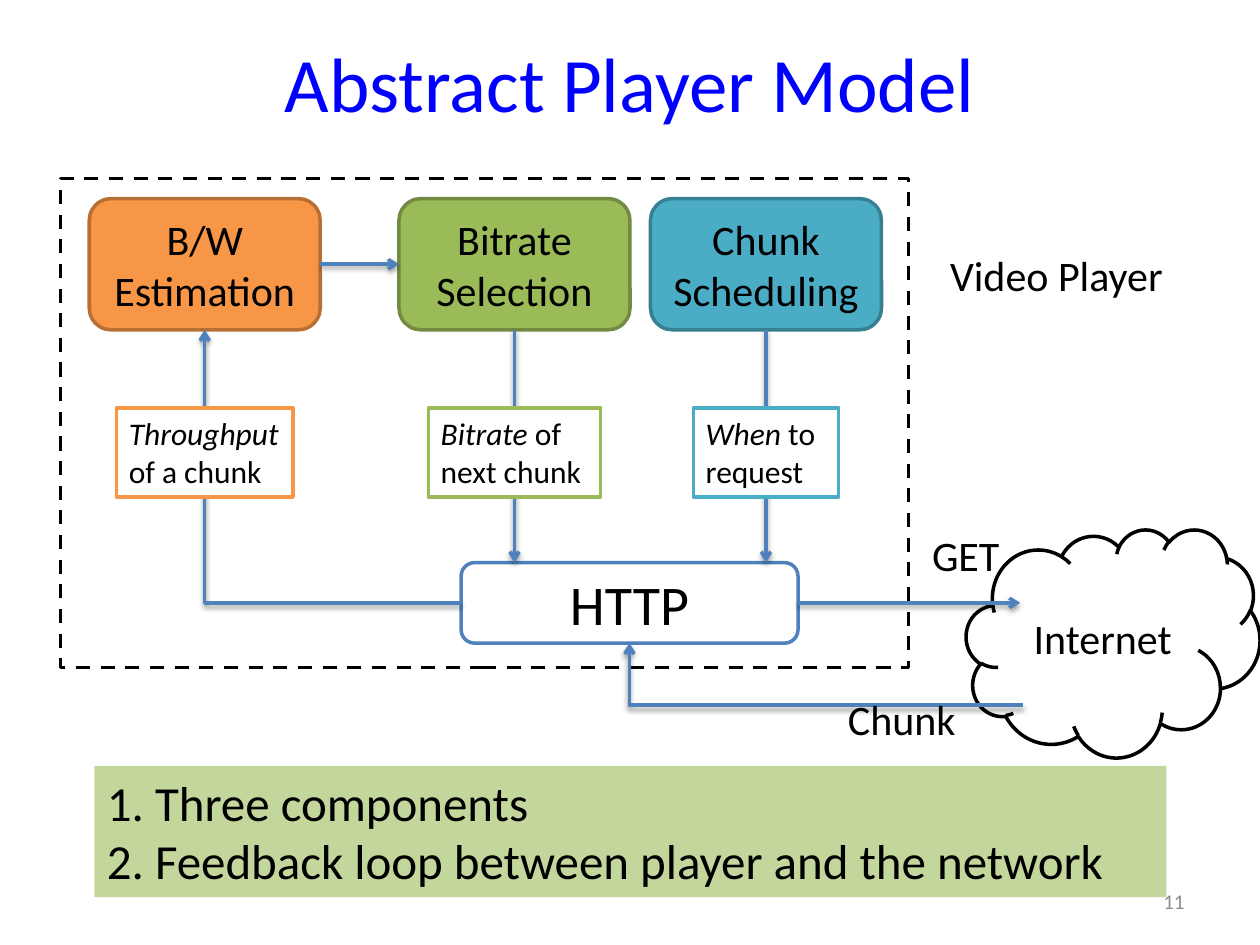
from lxml.etree import SubElement
from pptx import Presentation
from pptx.dml.color import RGBColor
from pptx.enum.dml import MSO_LINE
from pptx.enum.shapes import MSO_CONNECTOR, MSO_SHAPE
from pptx.enum.text import MSO_ANCHOR, PP_ALIGN
from pptx.oxml.ns import qn
from pptx.util import Pt

BLACK, WHITE, BLUE = "000000", "FFFFFF", "4F81BD"
ORANGE, GREEN, TEAL = "F79646", "9BBB59", "4BACC6"


def rgb(value):
    return RGBColor.from_string(value)


class Builder:
    font = "Calibri"
    line_width = 2

    def __init__(self, slide):
        self.s = slide

    def set_text(self, sp, paragraphs, size, color=BLACK, align=PP_ALIGN.LEFT,
                 anchor=MSO_ANCHOR.TOP, wrap=True):
        """Each paragraph is a string or a list of (text, italic) runs."""
        tf = sp.text_frame
        tf.word_wrap = wrap
        tf.vertical_anchor = anchor
        for i, content in enumerate(paragraphs):
            p = tf.add_paragraph() if i else tf.paragraphs[0]
            p.alignment = align
            p.font.name, p.font.size = self.font, Pt(size)
            p.font.color.rgb = rgb(color)
            runs = [(content, None)] if isinstance(content, str) else content
            for text, italic in runs:
                r = p.add_run()
                r.text = text
                r.font.italic = italic

    def text(self, box, content, size, **style):
        sp = self.s.shapes.add_textbox(*map(Pt, box))
        self.set_text(sp, [content], size, **style)

    def shape(self, kind, box, fill, line=None, dash=None):
        sp = self.s.shapes.add_shape(kind, *map(Pt, box))
        sp.shadow.inherit = False
        sp.fill.solid()
        sp.fill.fore_color.rgb = rgb(fill)
        if line:
            sp.line.color.rgb = rgb(line)
            sp.line.width = Pt(self.line_width)
            sp.line.dash_style = dash
        else:
            sp.line.fill.background()
        return sp

    def node(self, kind, box, content, fill, line, size=24):
        sp = self.shape(kind, box, fill, line)
        self.set_text(sp, [content], size, align=PP_ALIGN.CENTER,
                      anchor=MSO_ANCHOR.MIDDLE)

    def arrow(self, start, end, bent=False):
        kind = MSO_CONNECTOR.ELBOW if bent else MSO_CONNECTOR.STRAIGHT
        cxn = self.s.shapes.add_connector(kind, *map(Pt, start + end))
        cxn.line.color.rgb = rgb(BLUE)
        cxn.line.width = Pt(self.line_width)
        sp_pr = cxn._element.spPr
        if bent:  # one corner: across, then up
            sp_pr.find(qn("a:prstGeom")).set("prst", "bentConnector2")
        SubElement(sp_pr.find(qn("a:ln")), qn("a:tailEnd"), type="arrow")
        # Soft shadow straight below the line
        effects = SubElement(sp_pr, qn("a:effectLst"))
        shadow = SubElement(effects, qn("a:outerShdw"), blurRad=str(Pt(3.1)),
                            dist=str(Pt(1.6)), dir="5400000", rotWithShape="0")
        color = SubElement(shadow, qn("a:srgbClr"), val=BLACK)
        SubElement(color, qn("a:alpha"), val="38000")


def main():
    prs = Presentation()
    prs.slide_width, prs.slide_height = Pt(720), Pt(540)
    s = Builder(prs.slides.add_slide(prs.slide_layouts[6]))

    # Cloud, title, page number and player frame
    s.node(MSO_SHAPE.CLOUD, (552.2, 302.4, 167.8, 130.3), "Internet",
           WHITE, BLACK)
    s.text((36, 1.5, 648, 90), "Abstract Player Model", 44, color="0000FF",
           align=PP_ALIGN.CENTER, anchor=MSO_ANCHOR.MIDDLE)
    s.text((516, 500.5, 168, 28.75), "11", 12, color="8C8C8C",
           align=PP_ALIGN.RIGHT, anchor=MSO_ANCHOR.MIDDLE)
    s.shape(MSO_SHAPE.RECTANGLE, (34.6, 102, 484.6, 279.5), WHITE, BLACK,
            MSO_LINE.DASH)

    # Three components over the HTTP layer
    top, width, height = 113.5, 132, 75
    bottom = top + height
    http_left, http_top, http_width, http_height = 263.5, 321.5, 192.5, 46
    http_right, http_bottom = http_left + http_width, http_top + http_height
    http_mid = http_top + http_height / 2
    components = [
        (117, "B/W Estimation", ORANGE, "B76F34"),
        (294, "Bitrate Selection", GREEN, "738A42"),
        (437.7, "Chunk Scheduling", TEAL, "377F92"),
    ]
    for center, label, fill, line in components:
        s.node(MSO_SHAPE.ROUNDED_RECTANGLE,
               (center - width / 2, top, width, height), label, fill, line)
    s.node(MSO_SHAPE.ROUNDED_RECTANGLE,
           (http_left, http_top, http_width, http_height), "HTTP",
           WHITE, BLUE, 32)

    # Data flow
    estimation, selection, scheduling = [c[0] for c in components]
    s.arrow((http_left, http_mid), (estimation, bottom), bent=True)
    for x in (selection, scheduling):
        s.arrow((x, bottom), (x, http_top))
    s.arrow((http_right, http_mid), (583, http_mid))
    s.arrow((584.5, 403), (http_left + http_width / 2, http_bottom), bent=True)
    row_mid = top + height / 2
    s.arrow((estimation + width / 2, row_mid),
            (selection - width / 2, row_mid))

    # Notes on the vertical arrows
    notes = [
        (estimation, 101, "Throughput", " of a chunk", ORANGE),
        (selection, 98.5, "Bitrate", " of next chunk", GREEN),
        (scheduling, 83, "When", " to request", TEAL),
    ]
    for center, note_width, term, rest, line in notes:
        sp = s.shape(MSO_SHAPE.RECTANGLE,
                     (center - note_width / 2, 233, note_width, 51),
                     WHITE, line)
        s.set_text(sp, [[(term, True), (rest, False)]], 18)

    # Free labels
    for left, y, label_width, label in [
        (525.5, 299, 54, "GET"),
        (477.5, 392.5, 77, "Chunk"),
        (535.8, 139, 138, "Video Player"),
    ]:
        s.text((left, y, label_width, 36), label, 24, wrap=False)

    # Summary
    sp = s.shape(MSO_SHAPE.RECTANGLE, (54, 437.7, 612.5, 75), "C3D69B")
    s.set_text(sp, ["1. Three components",
                    "2. Feedback loop between player and the network"], 28)

    prs.save("out.pptx")


if __name__ == "__main__":
    main()
